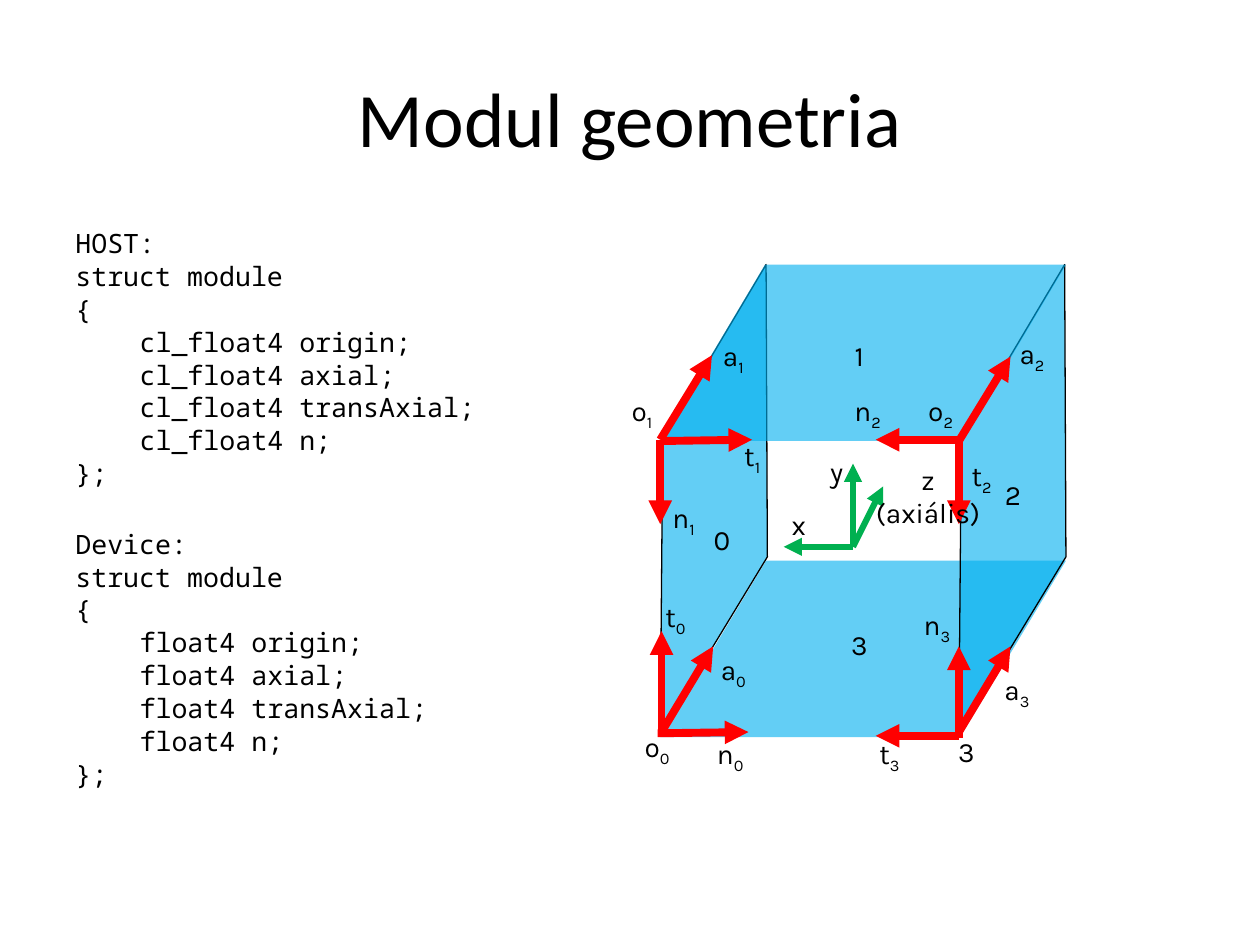
from lxml.etree import SubElement
from pptx import Presentation
from pptx.dml.color import RGBColor
from pptx.enum.shapes import MSO_CONNECTOR, MSO_SHAPE
from pptx.enum.text import MSO_ANCHOR, MSO_AUTO_SIZE, PP_ALIGN
from pptx.oxml.ns import qn
from pptx.util import Inches, Pt

HUES = {"ink": "000000", "wall": "00B0F0", "axis": "00B050", "edge": "FF0000"}
COLS, ROWS = 100, 75
WIDE = {"n": 4.9, "a": 4.2, "o": 4.3, "t": 3.6}

HOST = "cl_float4"
DEVICE = "float4"
FIELDS = ["origin", "axial", "transAxial", "n"]

SIDE = [(52.6, 34.8), (52.4, 58.2), (60.9, 44.2), (60.8, 21)]
SPAN = 23.7
PANES = [(44.5, 0.6), (21, 0.594)]

AXES = [(67.7, 36.8), (62.2, 43.4), (70.1, 38.6)]
EDGES = [
    (52.5, 58, 52.5, 50.1), (52.5, 58.1, 56.6, 51.3),
    (52.2, 58.2, 59.4, 58.1), (52.6, 35, 59.7, 34.9),
    (52.4, 34.9, 56.5, 28.2), (76.1, 35, 80.2, 28.3),
    (76.1, 58.1, 80.2, 51.3), (76.1, 35, 76.1, 41.6),
    (76.1, 58.4, 69.5, 58.4), (52.4, 34.9, 52.4, 41.6),
    (76.1, 34.9, 69.5, 34.9), (76.1, 58.6, 76.1, 51.3),
]
PLAIN = [
    ("x", 61.6, 39.8), ("y", 64.6, 35.6), ("0", 55.5, 41), ("1", 66.4, 26.4),
    ("2", 78.6, 37.4), ("3", 66.4, 49.3), ("3", 74.9, 57.8),
]
MARKS = {
    "n": [(55.5, 58), (51.8, 39.2), (66.4, 30.7), (71.9, 47.7)],
    "a": [(56.1, 51.3), (56.1, 26.4), (79.8, 26.2), (78.6, 52.9)],
    "t": [(51.8, 47.1), (57.9, 34.3), (76.1, 35.9), (68.8, 58)],
    "o": [(50, 57.4), (48.8, 30.7), (72.5, 30.7)],
}


class Deck:
    """Hold the style and the current slide, and draw on a 100 by 75 grid."""

    def __init__(self):
        self.file = Presentation()
        self.file.slide_width = Inches(10)
        self.file.slide_height = Inches(7.5)
        self.shapes = self.file.slides.add_slide(self.file.slide_layouts[6]).shapes

    def grid(self, *spots):
        units = (self.file.slide_width / COLS, self.file.slide_height / ROWS)
        return [round(spot * units[i % 2]) for i, spot in enumerate(spots)]

    def hue(self, name):
        return RGBColor.from_string(HUES[name])

    def box(self, *area, wrap=True):
        frame = self.shapes.add_textbox(*self.grid(*area)).text_frame
        frame.word_wrap = wrap
        return frame

    def run(self, para, text, size, font, low=False):
        run = para.add_run()
        run.text = text
        run.font.size = Pt(size)
        run.font.name = font
        run.font.color.rgb = self.hue("ink")
        if low:
            run.font._element.set("baseline", "-25000")

    def title(self, text):
        frame = self.box(5, 3, 90, 12.5)
        frame.vertical_anchor = MSO_ANCHOR.MIDDLE
        para = frame.paragraphs[0]
        para.alignment = PP_ALIGN.CENTER
        self.run(para, text, 44, "Calibri")

    def code(self, parts):
        frame = self.box(5, 17.5, 90, 49.5)
        para = frame.paragraphs[0]
        for i, (head, kind) in enumerate(parts):
            lines = [head, "struct module", "{"]
            lines += [f"{kind} {field};" for field in FIELDS] + ["};"]
            for j, line in enumerate(lines):
                if i or j:
                    para = frame.add_paragraph()
                para.space_before = Pt(21.9 if i and not j else 0.6)
                if line.startswith(kind):
                    para._p.get_or_add_pPr().set("marL", str(Inches(0.51)))
                self.run(para, line, 15.2, "Noto Sans Mono")

    def label(self, x, y, width, *lines):
        frame = self.box(x, y, width, 2.9 if len(lines) == 1 else 4.9, wrap=False)
        frame.auto_size = MSO_AUTO_SIZE.SHAPE_TO_FIT_TEXT
        for i, line in enumerate(lines):
            para = frame.add_paragraph() if i else frame.paragraphs[0]
            para.alignment = PP_ALIGN.CENTER
            for text, low in line:
                self.run(para, text, 16, "Karla", low)

    def glass(self, shape):
        shape.shadow.inherit = False
        shape.fill.solid()
        shape.fill.fore_color.rgb = self.hue("wall")
        tint = shape.element.spPr.find(qn("a:solidFill"))[0]
        SubElement(tint, qn("a:alpha")).set("val", "61000")

    def pane(self, y, skew):
        shape = self.shapes.add_shape(
            MSO_SHAPE.PARALLELOGRAM, *self.grid(52.4, y, 32.2, 14))
        shape.adjustments[0] = skew
        self.glass(shape)
        shape.line.fill.background()

    def wall(self, shift):
        first, *rest = [self.grid(x + shift, y) for x, y in SIDE]
        path = self.shapes.build_freeform(*first)
        path.add_line_segments(rest, close=True)
        shape = path.convert_to_shape()
        self.glass(shape)
        shape.line.color.rgb = self.hue("ink")
        shape.line.width = Pt(0.75)

    def arrow(self, ends, hue, width):
        line = self.shapes.add_connector(MSO_CONNECTOR.STRAIGHT, *self.grid(*ends))
        line.line.color.rgb = self.hue(hue)
        line.line.width = Pt(width)
        prop = line.element.spPr
        SubElement(prop.find(qn("a:ln")), qn("a:tailEnd")).set("type", "triangle")
        SubElement(prop, qn("a:effectLst"))


def main():
    deck = Deck()
    deck.title("Modul geometria")
    deck.code([("HOST:", HOST), ("Device:", DEVICE)])
    floor, roof = PANES
    deck.pane(*floor)
    for shift in (0, SPAN):
        deck.wall(shift)
    deck.pane(*roof)
    for tip in AXES:
        deck.arrow((67.7, 43.4, *tip), "axis", 3.5)
    for ends in EDGES:
        deck.arrow(ends, "edge", 4.5)
    for text, x, y in PLAIN:
        deck.label(x, y, 3.6, [(text, False)])
    deck.label(68.2, 36.2, 10.9, [("z", False)], [("(axiális)", False)])
    for name, spots in MARKS.items():
        for i, (x, y) in enumerate(spots):
            deck.label(x, y, WIDE[name], [(name, False), (str(i), True)])
    deck.file.save("out.pptx")


if __name__ == "__main__":
    main()
